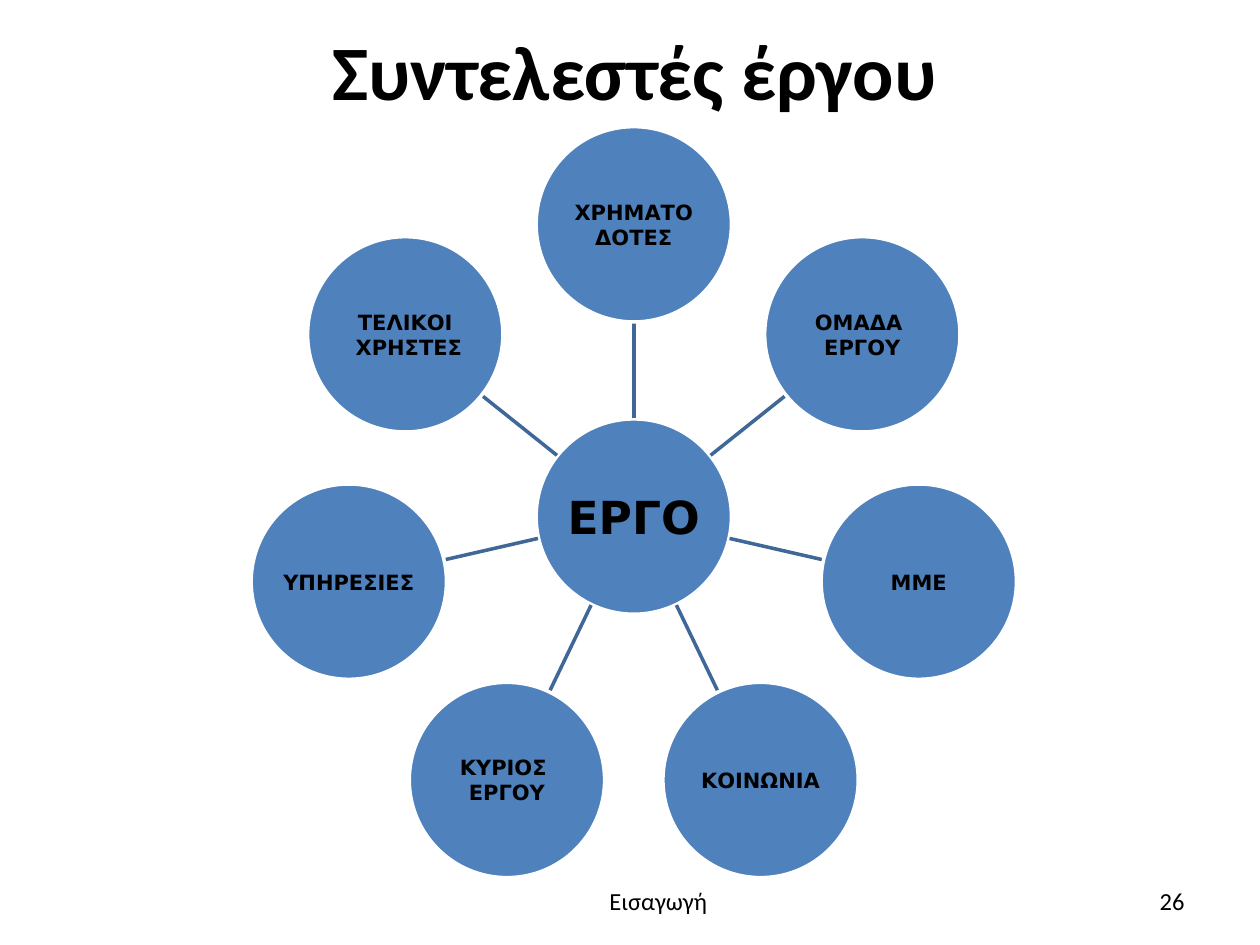
from math import cos, pi, sin

from lxml.etree import SubElement
from pptx import Presentation
from pptx.dml.color import RGBColor
from pptx.enum.shapes import MSO_CONNECTOR as Connector, MSO_SHAPE as Shape
from pptx.enum.text import MSO_ANCHOR as Anchor, PP_ALIGN as Align
from pptx.oxml.ns import qn
from pptx.util import Inches, Pt

COLORS = {"disc": "4F81BD", "spoke": "3F6797", "edge": "FFFFFF", "text": "000000"}
CENTER_X, CENTER_Y = 5.03, 4.1
ORBIT, DISC = 2.32, 1.55
SPOKE_START, SPOKE_END = 0.78, 1.55
ACTORS = [
    ["ΧΡΗΜΑΤΟ", "ΔΟΤΕΣ"],
    ["ΟΜΑΔΑ ", "ΕΡΓΟΥ"],
    ["ΜΜΕ"],
    ["ΚΟΙΝΩΝΙΑ"],
    ["ΚΥΡΙΟΣ ", "ΕΡΓΟΥ"],
    ["ΥΠΗΡΕΣΙΕΣ"],
    ["ΤΕΛΙΚΟΙ", " ΧΡΗΣΤΕΣ"],
]


class RadialPage:
    """Hold the style and the current slide, and draw each kind of element."""

    def __init__(self, page):
        self.page = page
        self.colors = {name: RGBColor.from_string(value) for name, value in COLORS.items()}

    def fill_text(self, shape, lines, size, font="Calibri", bold=False,
                  align=Align.CENTER, anchor=Anchor.MIDDLE, inset=None):
        frame = shape.text_frame
        frame.word_wrap = True
        frame.vertical_anchor = anchor
        if inset is not None:
            for side in ("left", "top", "right", "bottom"):
                setattr(frame, f"margin_{side}", Inches(inset))
        for index, line in enumerate(lines):
            para = frame.add_paragraph() if index else frame.paragraphs[0]
            para.alignment = align
            span = para.add_run()
            span.text = line
            for key, value in {"name": font, "size": Pt(size), "bold": bold}.items():
                setattr(span.font, key, value)
            span.font.color.rgb = self.colors["text"]

    def label(self, text, left, top, width, height, size, **style):
        box = self.page.shapes.add_textbox(*map(Inches, (left, top, width, height)))
        self.fill_text(box, [text], size, **style)

    def disc(self, lines, x, y, size):
        bounds = map(Inches, (x - DISC / 2, y - DISC / 2, DISC, DISC))
        circle = self.page.shapes.add_shape(Shape.OVAL, *bounds)
        circle.shadow.inherit = False
        circle.fill.solid()
        circle.fill.fore_color.rgb = self.colors["disc"]
        circle.line.color.rgb = self.colors["edge"]
        circle.line.width = Pt(2)
        self.fill_text(circle, lines, size, font="DejaVu Sans", bold=True, inset=0.01)

    def spoke(self, start, end):
        line = self.page.shapes.add_connector(Connector.STRAIGHT, *map(Inches, start + end))
        line.line.color.rgb = self.colors["spoke"]
        line.line.width = Pt(2)
        SubElement(line._element.spPr, qn("a:effectLst"))


def around(radius, angle):
    """Return the point at a clockwise angle from the top of the wheel."""
    return CENTER_X + radius * sin(angle), CENTER_Y - radius * cos(angle)


def main():
    """Build the wheel of project actors."""
    deck = Presentation()
    deck.slide_width, deck.slide_height = Inches(10), Inches(7.5)
    wheel = RadialPage(deck.slides.add_slide(deck.slide_layouts[6]))
    wheel.label("Συντελεστές έργου", 0.51, -0.03, 9.06, 1.17, 44, bold=True, inset=0)
    wheel.disc(["ΕΡΓΟ"], CENTER_X, CENTER_Y, 26)
    for index, lines in enumerate(ACTORS):
        angle = 2 * pi * index / len(ACTORS)
        wheel.spoke(around(SPOKE_START, angle), around(SPOKE_END, angle))
        wheel.disc(lines, *around(ORBIT, angle), 12)
    wheel.label("Εισαγωγή", 3.48, 6.98, 3.49, 0.55, 14, anchor=Anchor.TOP)
    wheel.label("26", 7.17, 6.95, 2.33, 0.4, 14, align=Align.RIGHT)
    deck.save("out.pptx")


if __name__ == "__main__":
    main()
